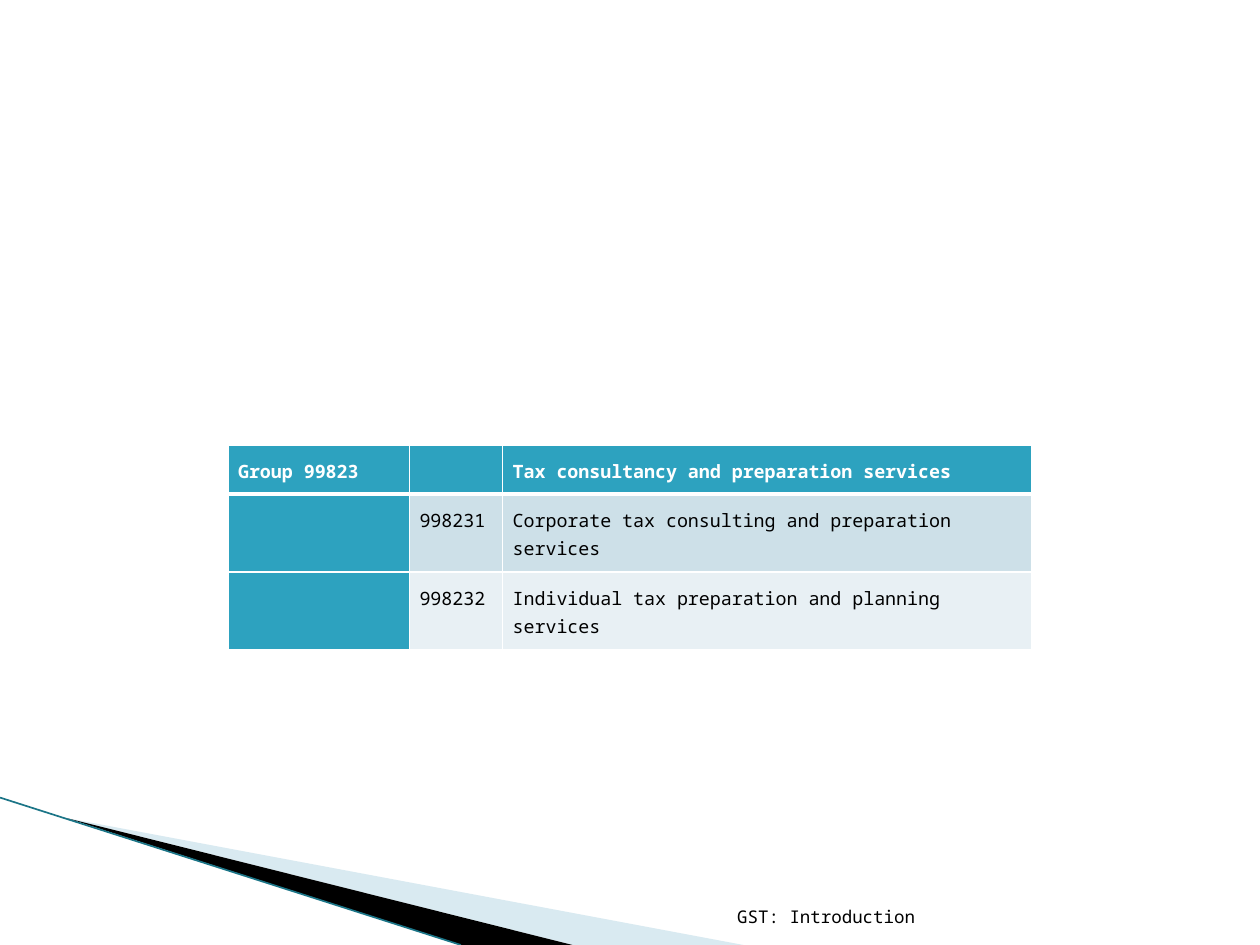
from lxml.etree import SubElement
from pptx import Presentation
from pptx.dml.color import RGBColor
from pptx.enum.shapes import MSO_CONNECTOR
from pptx.enum.text import MSO_ANCHOR, PP_ALIGN
from pptx.oxml.ns import qn
from pptx.util import Inches, Pt

FONT = "Noto Sans Mono"
COLORS = {
    "white": "FFFFFF",
    "black": "000000",
    "teal": "2DA2BF",
    "band_dark": "CDE0E8",
    "band_light": "E8F0F4",
    "wedge": "A0CBDC",
    "edge": "1B7587",
}
SERVICES = [
    ("Group 99823", "", "Tax consultancy and preparation services"),
    ("", "998231", "Corporate tax consulting and preparation services"),
    ("", "998232", "Individual tax preparation and planning services"),
]
COLUMN_WIDTHS = (1.44, 0.74, 4.2)
ROW_HEIGHTS = (0.39, 0.62, 0.62)


def color(name):
    return RGBColor.from_string(COLORS[name])


def set_font(paragraph, size, color_name, bold=False):
    font = paragraph.font
    font.name, font.size, font.bold = FONT, Pt(size), bold
    font.color.rgb = color(color_name)


def add_corner_wedges(slide, left, top, width, height):
    """Draw the two wedges and the edge line, with points as shares of the box."""
    def place(x, y):
        return Inches(left + x * width), Inches(top + y * height)

    wedges = [
        ("wedge", 40, [(0.09, 0.14), (1, 1), (0.77, 1)]),
        ("black", 100, [(0.09, 0.14), (0.77, 1), (0.62, 1)]),
    ]
    for color_name, opacity, points in wedges:
        start, *others = [place(*point) for point in points]
        builder = slide.shapes.build_freeform(*start)
        builder.add_line_segments(others, close=True)
        wedge = builder.convert_to_shape()
        wedge.shadow.inherit = False
        wedge.line.fill.background()
        wedge.fill.solid()
        wedge.fill.fore_color.rgb = color(color_name)
        if opacity < 100:
            fill_color = wedge.fill._xPr.find(f"{qn('a:solidFill')}/{qn('a:srgbClr')}")
            SubElement(fill_color, qn("a:alpha"), val=str(opacity * 1000))

    edge = slide.shapes.add_connector(
        MSO_CONNECTOR.STRAIGHT, *place(0, 0), *place(0.62, 1))
    edge.line.color.rgb = color("edge")
    edge.line.width = Pt(0.95)
    SubElement(edge._element.spPr, qn("a:effectLst"))


def set_borders(cell, bottom_width):
    """Put white borders before the fill, as the schema orders them."""
    properties = cell._tc.get_or_add_tcPr()
    widths = {"lnL": 1, "lnR": 1, "lnT": 1, "lnB": bottom_width}
    for position, (tag, width) in enumerate(widths.items()):
        border = SubElement(properties, qn(f"a:{tag}"), w=str(Pt(width)))
        fill = SubElement(border, qn("a:solidFill"))
        SubElement(fill, qn("a:srgbClr"), val=COLORS["white"])
        properties.insert(position, border)


def add_services_table(slide, left, top):
    frame = slide.shapes.add_table(
        len(SERVICES), len(COLUMN_WIDTHS), Inches(left), Inches(top),
        Inches(sum(COLUMN_WIDTHS)), Inches(sum(ROW_HEIGHTS)))
    table = frame.table
    for column, width in zip(table.columns, COLUMN_WIDTHS):
        column.width = Inches(width)
    for row, height in zip(table.rows, ROW_HEIGHTS):
        row.height = Inches(height)

    bands = ("teal", "band_dark", "band_light")
    for row_index, texts in enumerate(SERVICES):
        is_header = row_index == 0
        for column_index, text in enumerate(texts):
            cell = table.cell(row_index, column_index)
            cell.fill.solid()
            cell.fill.fore_color.rgb = color(
                "teal" if column_index == 0 else bands[row_index])
            set_borders(cell, 3 if is_header else 1)
            cell.margin_left = cell.margin_right = Inches(0.08)
            cell.margin_top = cell.margin_bottom = Inches(0.08 if text else 0)
            if text:
                cell.text = text
                paragraph = cell.text_frame.paragraphs[0]
                paragraph.line_spacing = 1.15
                set_font(paragraph, 10.5, "white" if is_header else "black", is_header)


def add_footer(slide, left, top, width, height):
    footer = slide.shapes.add_textbox(*map(Inches, (left, top, width, height)))
    text_frame = footer.text_frame
    text_frame.word_wrap = True
    text_frame.vertical_anchor = MSO_ANCHOR.BOTTOM
    paragraph = text_frame.paragraphs[0]
    paragraph.text = "GST: Introduction"
    paragraph.alignment = PP_ALIGN.RIGHT
    set_font(paragraph, 10, "black")


def main():
    presentation = Presentation()
    presentation.slide_width, presentation.slide_height = Inches(10), Inches(7.5)
    slide = presentation.slides.add_slide(presentation.slide_layouts[6])
    add_corner_wedges(slide, 0, 6.33, 5.9, 1.17)
    add_services_table(slide, 1.81, 3.53)
    add_footer(slide, 4.79, 7.01, 2.57, 0.4)
    presentation.save("out.pptx")


if __name__ == "__main__":
    main()
